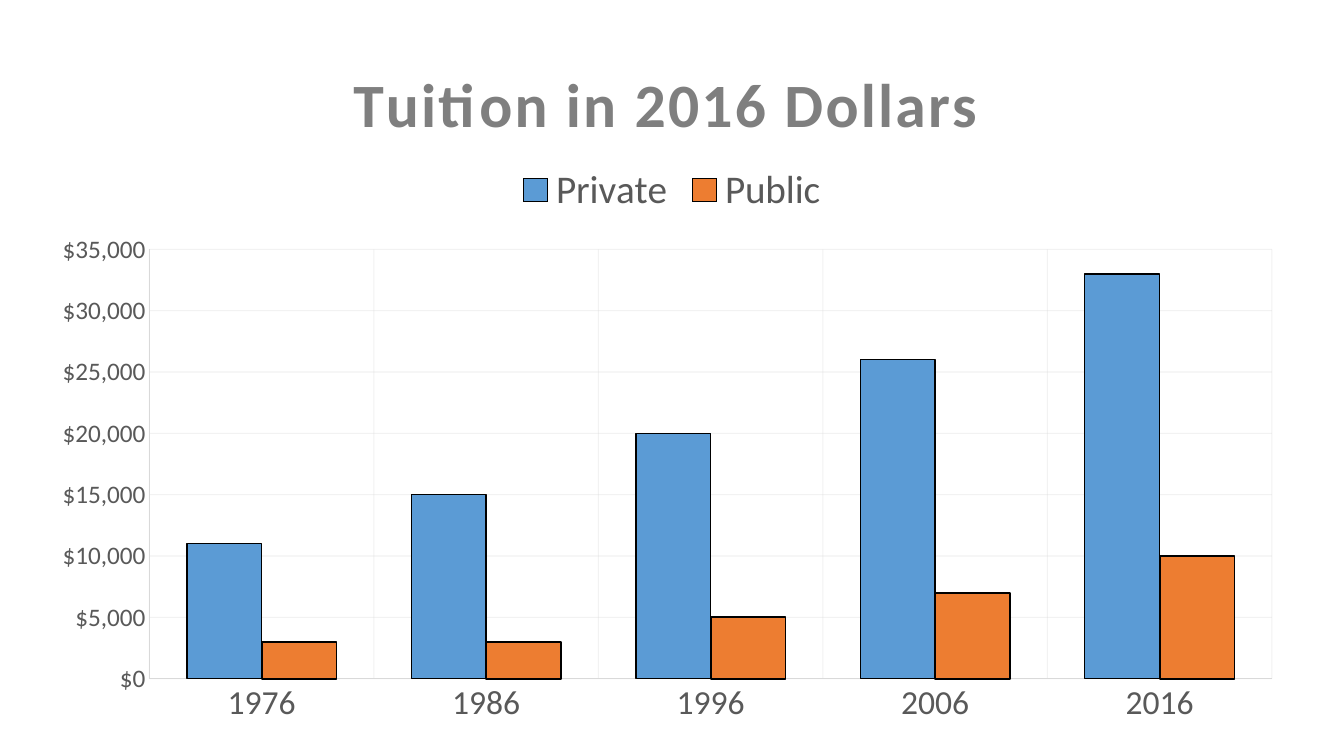
from lxml.etree import SubElement
from pptx import Presentation
from pptx.chart.data import CategoryChartData
from pptx.dml.color import RGBColor
from pptx.enum.chart import XL_CHART_TYPE, XL_LEGEND_POSITION, XL_TICK_MARK
from pptx.oxml import parse_xml
from pptx.oxml.ns import nsdecls, qn
from pptx.util import Cm, Pt

COLORS = {
    "private": "5B9BD5",
    "public": "ED7D31",
    "outline": "000000",
    "title": "7F7F7F",
    "label": "595959",
    "rule": "D9D9D9",
}
YEARS = ["1976", "1986", "1996", "2006", "2016"]
TUITION = {
    "Private": [11000, 15000, 20000, 26000, 33000],
    "Public": [3000, 3000, 5000, 7000, 10000],
}
OUTLINE_WIDTHS = {"Private": 1, "Public": 1.25}


def color(key):
    return RGBColor.from_string(COLORS[key])


def style_font(font, size, key, bold=False):
    font.name = "Calibri"
    font.size = Pt(size)
    font.bold = bold
    font.color.rgb = color(key)


def style_line(line, key, width):
    line.color.rgb = color(key)
    line.width = Pt(width)


def place(part, position, inner=False, **fractions):
    for old_layout in part.findall(qn("c:layout")):
        part.remove(old_layout)
    layout = parse_xml(f"<c:layout {nsdecls('c')}><c:manualLayout/></c:layout>")
    manual = layout[0]
    if inner:
        SubElement(manual, qn("c:layoutTarget")).set("val", "inner")
    for side in ("x", "y"):
        SubElement(manual, qn(f"c:{side}Mode")).set("val", "edge")
    for name, fraction in fractions.items():
        SubElement(manual, qn(f"c:{name}")).set("val", str(fraction))
    part.insert(position, layout)


def add_tuition_chart(slide):
    tuition = CategoryChartData(number_format='"$"#,##0')
    tuition.categories = YEARS
    for sector, amounts in TUITION.items():
        tuition.add_series(sector, amounts)
    frame = slide.shapes.add_chart(
        XL_CHART_TYPE.COLUMN_CLUSTERED,
        Cm(0.94), Cm(1.12), Cm(31.75), Cm(17.45), tuition,
    )
    return frame.chart


def style_title(chart):
    chart.has_title = True
    heading = chart.chart_title.text_frame.paragraphs[0].add_run()
    heading.text = "Tuition in 2016 Dollars"
    style_font(heading.font, 44, "title", bold=True)
    heading.font._element.set("spc", "150")
    chart.chart_title.include_in_layout = False
    place(next(chart.element.iter(qn("c:title"))), 1, x=0.242, y=0.008)


def style_legend(chart):
    chart.has_legend = True
    chart.legend.position = XL_LEGEND_POSITION.TOP
    chart.legend.include_in_layout = False
    style_font(chart.legend.font, 28, "label")
    place(next(chart.element.iter(qn("c:legend"))), 1, x=0.376, y=0.165)


def style_axis(axis, size):
    axis.major_tick_mark = XL_TICK_MARK.NONE
    axis.minor_tick_mark = XL_TICK_MARK.NONE
    style_font(axis.tick_labels.font, size, "label")
    style_line(axis.format.line, "rule", 0.25)
    axis.has_major_gridlines = True
    style_line(axis.major_gridlines.format.line, "rule", 0.75)


def style_axes(chart):
    style_axis(chart.category_axis, 24)
    dollars = chart.value_axis
    style_axis(dollars, 18)
    dollars.minimum_scale = 0
    dollars.maximum_scale = 35000
    dollars.major_unit = 5000
    dollars.tick_labels.number_format = '"$"#,##0'
    dollars.tick_labels.number_format_is_linked = False
    for gridlines in chart.element.iter(qn("c:majorGridlines")):
        for tint in gridlines.iter(qn("a:srgbClr")):
            SubElement(tint, qn("a:alpha")).set("val", "32000")


def style_columns(chart):
    columns = chart.plots[0]
    columns.gap_width = 100
    columns.overlap = 0
    columns.vary_by_categories = False
    for sector in columns.series:
        sector.format.fill.solid()
        sector.format.fill.fore_color.rgb = color(sector.name.lower())
        style_line(sector.format.line, "outline", OUTLINE_WIDTHS[sector.name])
    plot_area = next(chart.element.iter(qn("c:plotArea")))
    place(plot_area, 0, inner=True, x=0.089, y=0.296, w=0.891, h=0.62)


def main():
    deck = Presentation()
    deck.slide_width = Cm(33.87)
    deck.slide_height = Cm(19.05)
    slide = deck.slides.add_slide(deck.slide_layouts[6])
    chart = add_tuition_chart(slide)
    style_font(chart.font, 10, "outline")
    style_title(chart)
    style_legend(chart)
    style_axes(chart)
    style_columns(chart)
    deck.save("out.pptx")


if __name__ == "__main__":
    main()
